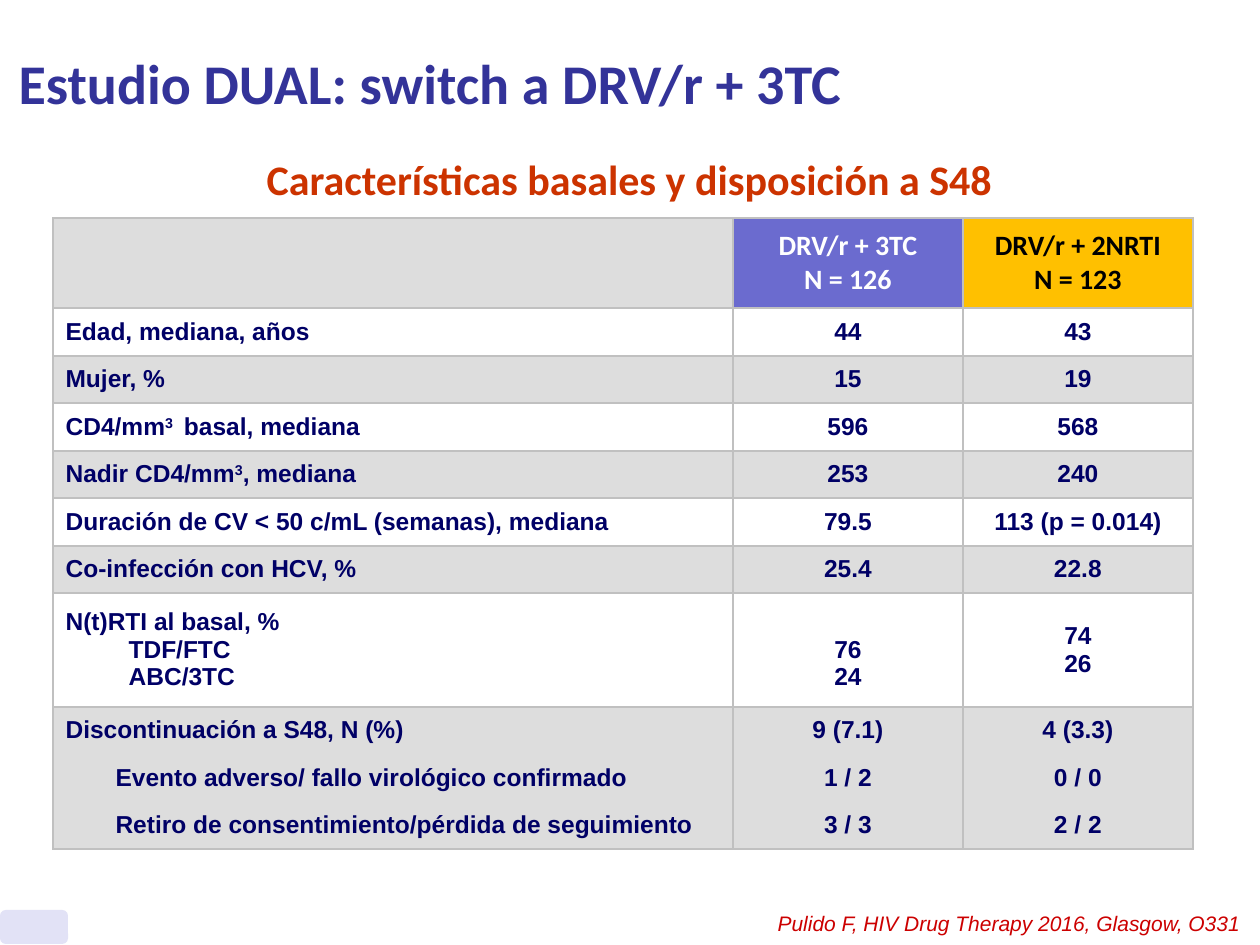
from dataclasses import dataclass
from typing import Optional

from lxml.etree import SubElement
from pptx import Presentation
from pptx.dml.color import RGBColor
from pptx.enum.shapes import MSO_SHAPE
from pptx.enum.text import MSO_ANCHOR as Anchor, PP_ALIGN as Align
from pptx.oxml.ns import qn
from pptx.util import Emu, Pt

EMU_PER_PX = 914400 / 126

COLORS = {
    "title": "333399",
    "subtitle": "CC3300",
    "citation": "CC0000",
    "corner": "E2E2F6",
    "body": "000066",
    "white": "FFFFFF",
    "black": "000000",
    "gray": "DDDDDD",
    "border": "C0C0C0",
    "dual_arm": "6B6BCF",
    "triple_arm": "FFC000",
}
COLUMN_WIDTHS = (50, 630, 230, 230)
HEADER_HEIGHT = 90
NRTI_HEIGHT = 114
LEVEL_INDENT = 63
NRTI_VALUES_TOP = 34


@dataclass(frozen=True)
class Style:
    size: int
    font: str
    color: str
    bold: bool = True
    italic: bool = False
    align: Align = Align.LEFT


@dataclass(frozen=True)
class Row:
    """A table row; ^ in the label starts and ends a superscript."""
    label: str
    dual: str
    triple: str
    fill: str
    nested: bool = False
    edges: str = "LRTB"
    height: Optional[int] = None


TITLE = Style(32, "Calibri", "title")
SUBTITLE = Style(24, "Calibri", "subtitle", align=Align.CENTER)
CITATION = Style(12, "Arial", "citation", bold=False, italic=True, align=Align.RIGHT)
LABEL = Style(14, "Arial", "body")
VALUE = Style(14, "Arial", "body", align=Align.CENTER)
DUAL_HEADER = Style(16, "Calibri", "white", align=Align.CENTER)
TRIPLE_HEADER = Style(16, "Calibri", "black", align=Align.CENTER)

ROWS = (
    Row("Edad, mediana, años", "44", "43", "white"),
    Row("Mujer, %", "15", "19", "gray"),
    Row("CD4/mm^3 ^ basal, mediana", "596", "568", "white"),
    Row("Nadir CD4/mm^3^, mediana", "253", "240", "gray"),
    Row("Duración de CV < 50 c/mL (semanas), mediana", "79.5", "113 (p = 0.014)", "white"),
    Row("Co-infección con HCV, %", "25.4", "22.8", "gray"),
    Row("N(t)RTI al basal, %\nTDF/FTC\nABC/3TC", "76\n24", "74\n26", "white",
        height=NRTI_HEIGHT),
    Row("Discontinuación a S48, N (%)", "9 (7.1)", "4 (3.3)", "gray", edges="LRT"),
    Row("Evento adverso/ fallo virológico confirmado", "1 / 2", "0 / 0", "gray",
        nested=True, edges="LR"),
    Row("Retiro de consentimiento/pérdida de seguimiento", "3 / 3", "2 / 2", "gray",
        nested=True, edges="LRB"),
)


def px(length: int) -> Emu:
    return Emu(round(length * EMU_PER_PX))


def rgb(name: str) -> RGBColor:
    return RGBColor.from_string(COLORS[name])


def write(text_frame, text: str, style: Style) -> None:
    """Set one paragraph per line, with ^ marking superscripts."""
    for index, line in enumerate(text.split("\n")):
        paragraph = text_frame.paragraphs[0] if index == 0 else text_frame.add_paragraph()
        paragraph.alignment = style.align
        for part_index, part in enumerate(line.split("^")):
            run = paragraph.add_run()
            run.text = part
            font = run.font
            font.size, font.name = Pt(style.size), style.font
            font.bold, font.italic = style.bold, style.italic
            font.color.rgb = rgb(style.color)
            if part_index % 2:
                run._r.get_or_add_rPr().set("baseline", "30000")


def add_text(slide, text: str, style: Style, left: int, top: int, width: int, height: int):
    box = slide.shapes.add_textbox(px(left), px(top), px(width), px(height))
    box.text_frame.word_wrap = True
    write(box.text_frame, text, style)
    return box


def add_title(slide) -> None:
    title = slide.shapes.title
    title.left, title.top, title.width, title.height = px(6), px(6), px(1129), px(152)
    title.text_frame.vertical_anchor = Anchor.MIDDLE
    write(title.text_frame, "Estudio DUAL: switch a DRV/r + 3TC", TITLE)


def add_corner_block(slide) -> None:
    block = slide.shapes.add_shape(
        MSO_SHAPE.ROUNDED_RECTANGLE, px(0), px(910), px(68), px(34))
    block.shadow.inherit = False
    block.fill.solid()
    block.fill.fore_color.rgb = rgb("corner")
    block.line.fill.background()


def format_cell(cell, fill: str, edges: str) -> None:
    """Border the listed edges, clear the others, then fill the cell."""
    cell.vertical_anchor = Anchor.MIDDLE
    properties = cell._tc.get_or_add_tcPr()
    for edge in "LRTB":
        line = SubElement(properties, qn(f"a:ln{edge}"), w=str(Pt(1)))
        if edge in edges:
            solid = SubElement(line, qn("a:solidFill"))
            SubElement(solid, qn("a:srgbClr"), val=COLORS["border"])
        else:
            SubElement(line, qn("a:noFill"))
    cell.fill.solid()
    cell.fill.fore_color.rgb = rgb(fill)


def fill_row(table, index: int, row: Row) -> None:
    cells = [table.cell(index, column) for column in range(len(COLUMN_WIDTHS))]
    margin_cell, label_cell, dual_cell, triple_cell = cells
    table.rows[index].height = px(row.height or 47 + index % 2)
    hidden_edges = ("R", "L", "", "") if row.nested else ("", "", "", "")
    for cell, hidden in zip(cells, hidden_edges):
        format_cell(cell, row.fill, row.edges.replace(hidden, "") if hidden else row.edges)
    if row.nested:
        margin_cell.margin_top = margin_cell.margin_bottom = 0
    else:
        margin_cell.merge(label_cell)
        label_cell = margin_cell
    write(label_cell.text_frame, row.label, LABEL)
    for paragraph in label_cell.text_frame.paragraphs[1:]:
        paragraph._p.get_or_add_pPr().set("marL", str(px(LEVEL_INDENT)))
    write(dual_cell.text_frame, row.dual, VALUE)
    write(triple_cell.text_frame, row.triple, VALUE)
    if row.height:
        dual_cell.margin_top = px(NRTI_VALUES_TOP)


def add_baseline_table(slide) -> None:
    table = slide.shapes.add_table(
        len(ROWS) + 1, len(COLUMN_WIDTHS), px(53), px(218),
        px(sum(COLUMN_WIDTHS)), px(632)).table
    table.first_row = table.horz_banding = False
    for column, width in zip(table.columns, COLUMN_WIDTHS):
        column.width = px(width)
    table.rows[0].height = px(HEADER_HEIGHT)
    for column, fill in enumerate(("gray", "gray", "dual_arm", "triple_arm")):
        format_cell(table.cell(0, column), fill, "LRTB")
    table.cell(0, 0).merge(table.cell(0, 1))
    write(table.cell(0, 2).text_frame, "DRV/r + 3TC\nN = 126", DUAL_HEADER)
    write(table.cell(0, 3).text_frame, "DRV/r + 2NRTI\nN = 123", TRIPLE_HEADER)
    for index, row in enumerate(ROWS, start=1):
        fill_row(table, index, row)


def main() -> None:
    presentation = Presentation()
    presentation.slide_width, presentation.slide_height = px(1260), px(945)
    slide = presentation.slides.add_slide(presentation.slide_layouts[5])
    add_title(slide)
    subtitle = add_text(slide, "Características basales y disposición a S48", SUBTITLE,
                        172, 171, 915, 44)
    subtitle.text_frame.paragraphs[0].line_spacing = Pt(15.2)
    add_baseline_table(slide)
    add_text(slide, "Pulido F, HIV Drug Therapy 2016, Glasgow, O331", CITATION,
             685, 904, 568, 38)
    add_corner_block(slide)
    presentation.save("out.pptx")


if __name__ == "__main__":
    main()
